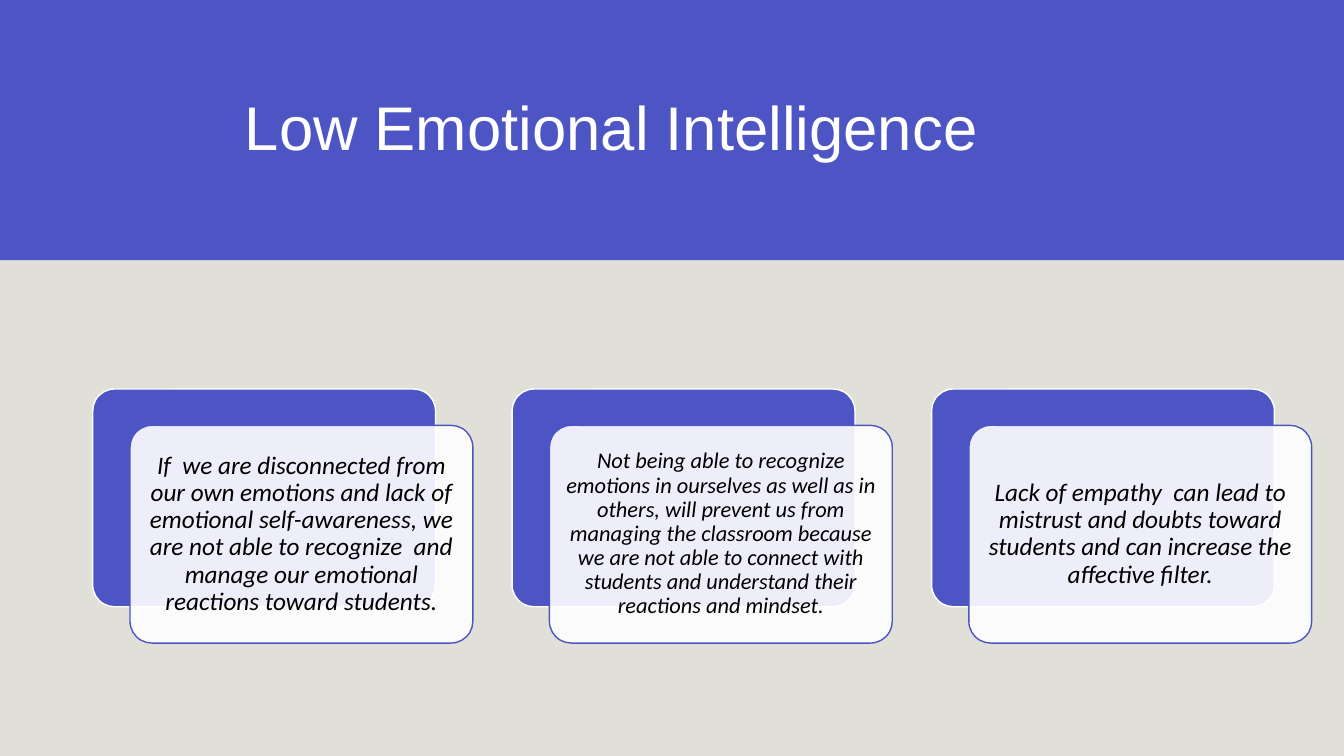
from lxml import etree
from pptx import Presentation
from pptx.dml.color import RGBColor
from pptx.enum import shapes, text
from pptx.oxml import ns
from pptx.util import Inches, Pt

COLORS = {"white": "FFFFFF", "stone": "D4D4C8", "indigo": "4D54C3", "black": "000000"}
CARDS = [
    ("If  we are disconnected from our own emotions and lack of emotional "
     "self-awareness, we are not able to recognize  and manage our emotional "
     "reactions toward students.", 18),
    ("Not being able to recognize emotions in ourselves as well as in others, "
     "will prevent us from managing the classroom because we are not able to "
     "connect with students and understand their reactions and mindset.", 16),
    ("Lack of empathy  can lead to mistrust and doubts toward students and can "
     "increase the affective filter.", 18),
]
CARD_LEFT, CARD_TOP, CARD_WIDTH, CARD_HEIGHT = 0.92, 3.86, 3.4, 2.16
CARD_STEP = 4.16
FRONT_SHIFT_X, FRONT_SHIFT_Y = 0.37, 0.36

deck = Presentation()
deck.slide_width, deck.slide_height = Inches(13.33), Inches(7.5)
page = deck.slides.add_slide(deck.slide_layouts[6])


def add_panel(left, top, width, height, fill, line=None, opacity=100, rounded=False):
    """Add a filled rectangle; opacity is a percentage."""
    kind = shapes.MSO_SHAPE.ROUNDED_RECTANGLE if rounded else shapes.MSO_SHAPE.RECTANGLE
    panel = page.shapes.add_shape(
        kind, Inches(left), Inches(top), Inches(width), Inches(height))
    panel.shadow.inherit = False
    if rounded:
        panel.adjustments[0] = 0.1
    panel.fill.solid()
    panel.fill.fore_color.rgb = RGBColor.from_string(COLORS[fill])
    if opacity < 100:
        color = panel.fill._xPr.find(".//" + ns.qn("a:srgbClr"))
        etree.SubElement(color, ns.qn("a:alpha")).set("val", str(opacity * 1000))
    if line:
        panel.line.color.rgb = RGBColor.from_string(COLORS[line])
        panel.line.width = Pt(1)
    else:
        panel.line.fill.background()
    return panel


def write(box, words, size, font, color, align, margin, italic=False, spacing=1.0):
    frame = box.text_frame
    frame.word_wrap = True
    frame.vertical_anchor = text.MSO_ANCHOR.MIDDLE
    frame.margin_left = frame.margin_right = Inches(margin)
    frame.margin_top = frame.margin_bottom = Inches(margin)
    para = frame.paragraphs[0]
    para.alignment = align
    para.line_spacing = spacing
    span = para.add_run()
    span.text = words
    span.font.size = Pt(size)
    span.font.name = font
    span.font.italic = italic
    span.font.color.rgb = RGBColor.from_string(COLORS[color])


add_panel(0, 0, 13.33, 7.5, "white")
add_panel(0, 0, 13.33, 7.5, "stone", opacity=70)
add_panel(0, 0, 13.33, 2.58, "indigo")

title = page.shapes.add_textbox(Inches(2.33), Inches(0.42), Inches(9.92), Inches(1.75))
write(title, "Low Emotional Intelligence", 44, "Arial", "white",
      text.PP_ALIGN.LEFT, 0.1, spacing=0.9)

for index, (words, size) in enumerate(CARDS):
    left = CARD_LEFT + index * CARD_STEP
    add_panel(left, CARD_TOP, CARD_WIDTH, CARD_HEIGHT, "indigo", line="white", rounded=True)
    front = add_panel(left + FRONT_SHIFT_X, CARD_TOP + FRONT_SHIFT_Y, CARD_WIDTH, CARD_HEIGHT,
                      "white", line="indigo", opacity=90, rounded=True)
    # The rounded corners add a little to this margin.
    write(front, words, size, "Calibri", "black", text.PP_ALIGN.CENTER, 0.07,
          italic=True, spacing=0.9)

deck.save("out.pptx")
